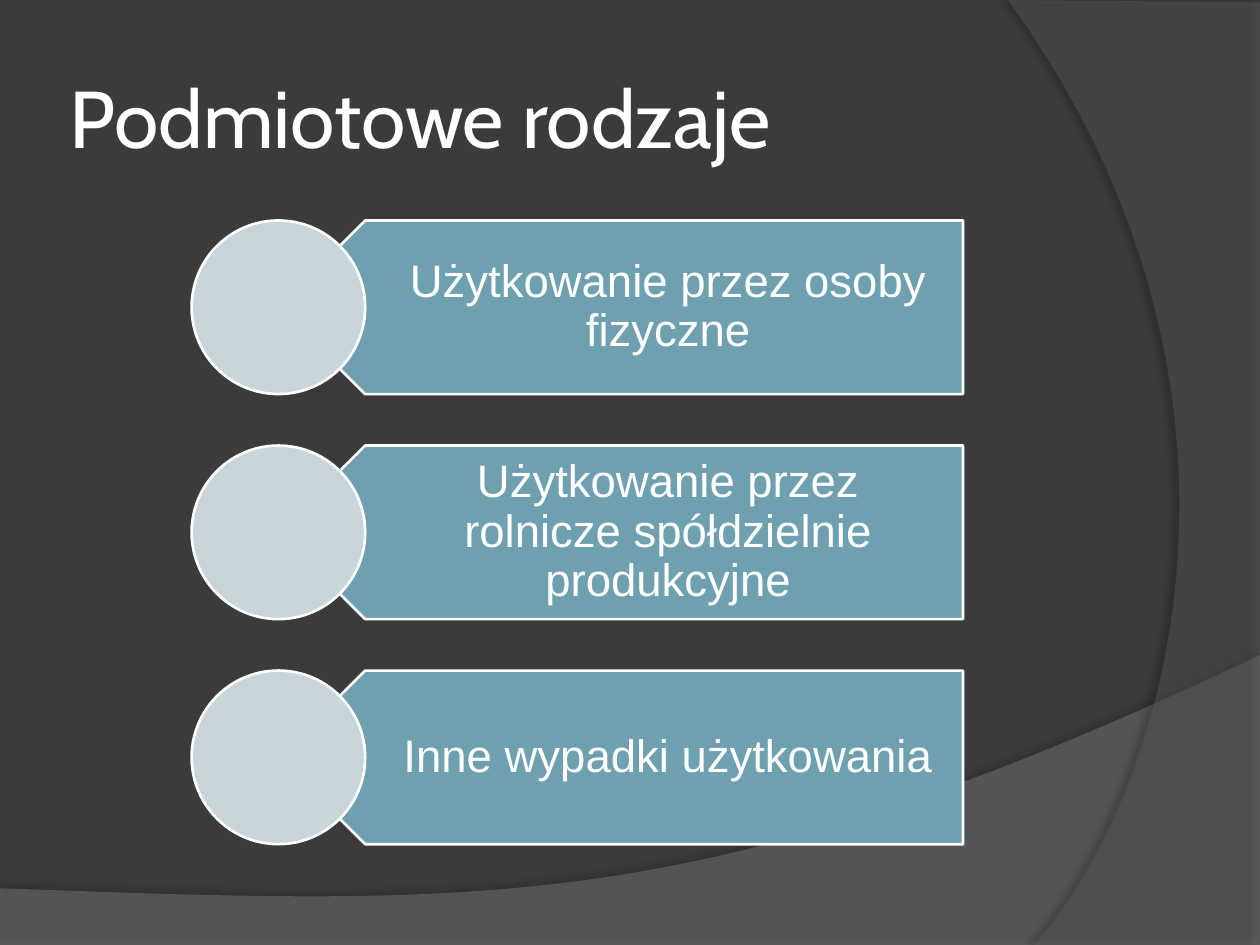
from lxml import etree
from pptx import Presentation
from pptx.dml.color import RGBColor
from pptx.enum import shapes, text
from pptx.oxml import ns
from pptx.util import Pt

COLORS = {
    "background": "3B3B3B",
    "bottom wave": "7F7F7F",
    "right wave": "5E5E5E",
    "arrow": "6EA0B0",
    "circle": "C8D6DC",
    "white": "FFFFFF",
    "shadow": "000000",
}


def paint(shape, color, outlined=True):
    shape.shadow.inherit = False
    shape.fill.solid()
    shape.fill.fore_color.rgb = RGBColor.from_string(COLORS[color])
    if outlined:
        shape.line.color.rgb = RGBColor.from_string(COLORS["white"])
        shape.line.width = Pt(1.5)
    else:
        shape.line.fill.background()


def add_span(para, words, font, size):
    span = para.add_run()
    span.text = words
    span.font.name = font
    span.font.size = Pt(size)
    span.font.color.rgb = RGBColor.from_string(COLORS["white"])


deck = Presentation()
deck.slide_width, deck.slide_height = Pt(720), Pt(540)
page = deck.slides.add_slide(deck.slide_layouts[5])
page.background.fill.solid()
page.background.fill.fore_color.rgb = RGBColor.from_string(COLORS["background"])
title = page.shapes.title

# Background waves: straight corners, then a cubic curve from the last corner
# (name, corners, curve controls and end, opacity, shadow opacity, distance, angle)
waves = [
    ("bottom wave", [(0, 507.6), (0, 540), (720, 540), (720, 374.4)],
     [(402.5, 524.9), (281.5, 517.7), (0, 507.6)], 45, 35, 3.5, 270),
    ("right wave", [(720, 1.4), (720, 540), (591.1, 540)],
     [(673.2, 445.7), (733, 216), (576, 0)], 40, 45, 4, 180),
]
for name, corners, curve, opacity, shade, distance, angle in waves:
    bends = [corners[-1]] + curve
    points = list(corners)
    for step in range(1, 41):
        t = step / 40
        weights = [(1 - t) ** 3, 3 * t * (1 - t) ** 2, 3 * t * t * (1 - t), t ** 3]
        points.append(tuple(sum(w * bend[axis] for w, bend in zip(weights, bends))
                            for axis in (0, 1)))
    outline = [(Pt(x), Pt(y)) for x, y in points]
    builder = page.shapes.build_freeform(*outline[0])
    builder.add_line_segments(outline[1:], close=True)
    wave = builder.convert_to_shape()
    paint(wave, name, outlined=False)
    title.element.addprevious(wave.element)

    # Transparency and soft shadow
    fill_color = wave.element.spPr.find(".//" + ns.qn("a:srgbClr"))
    etree.SubElement(fill_color, ns.qn("a:alpha"), val=str(opacity * 1000))
    effects = wave.element.spPr.find(ns.qn("a:effectLst"))
    shadow = etree.SubElement(effects, ns.qn("a:outerShdw"), blurRad=str(Pt(4)),
                              dist=str(Pt(distance)), dir=str(angle * 60000),
                              rotWithShape="0")
    shadow_color = etree.SubElement(shadow, ns.qn("a:srgbClr"), val=COLORS["shadow"])
    etree.SubElement(shadow_color, ns.qn("a:alpha"), val=str(shade * 1000))

# Title
title.left, title.top, title.width, title.height = Pt(36), Pt(21.6), Pt(588), Pt(90)
frame = title.text_frame
frame.auto_size = text.MSO_AUTO_SIZE.NONE
frame.vertical_anchor = text.MSO_ANCHOR.MIDDLE
frame.margin_left = frame.margin_right = Pt(3.6)
frame.margin_top = frame.margin_bottom = Pt(3.6)
para = frame.paragraphs[0]
para.alignment = text.PP_ALIGN.LEFT
add_span(para, "Podmiotowe rodzaje", "Cabin", 46)

# Rows: arrow pointing left, its label, and a circle over the tip
kinds = [
    "Użytkowanie przez osoby fizyczne",
    "Użytkowanie przez rolnicze spółdzielnie produkcyjne",
    "Inne wypadki użytkowania",
]
height, pitch = Pt(99.2), 128.6
for row, kind in enumerate(kinds):
    top = Pt(126 + row * pitch)
    arrow = page.shapes.add_shape(shapes.MSO_SHAPE.PENTAGON,
                                  Pt(159.1), top, Pt(391.2), height)
    arrow.rotation = 180
    paint(arrow, "arrow")

    label = page.shapes.add_textbox(Pt(184), top, Pt(366.3), height)
    frame = label.text_frame
    frame.word_wrap = True
    frame.vertical_anchor = text.MSO_ANCHOR.MIDDLE
    frame.margin_left, frame.margin_right = Pt(43.8), Pt(14.4)
    frame.margin_top = frame.margin_bottom = Pt(7.9)
    para = frame.paragraphs[0]
    para.alignment = text.PP_ALIGN.CENTER
    para.line_spacing = 0.9
    add_span(para, kind, "Arial", 26)

    circle = page.shapes.add_shape(shapes.MSO_SHAPE.OVAL, Pt(109.5), top, height, height)
    paint(circle, "circle")

deck.save("out.pptx")
